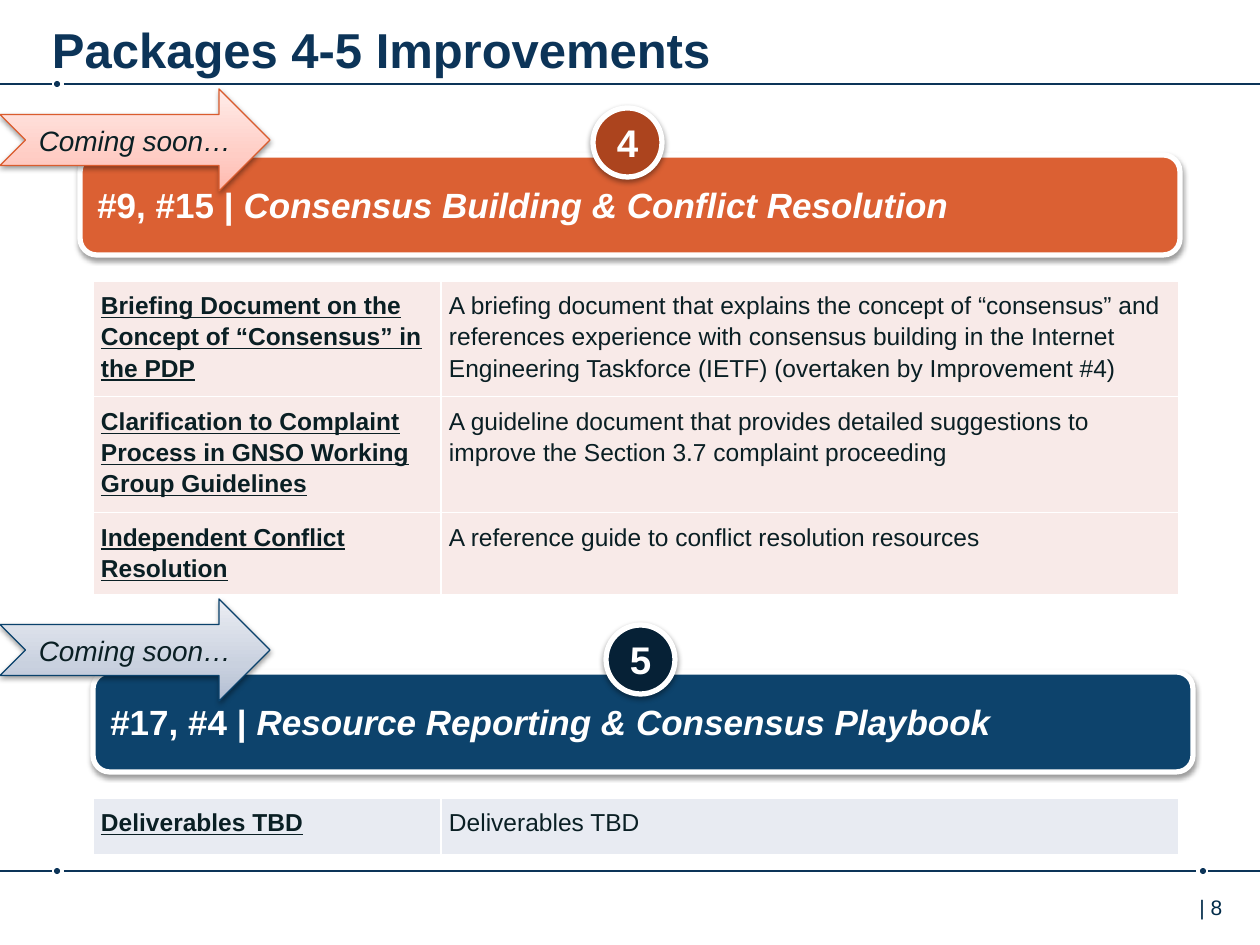
from typing import NamedTuple

from pptx import Presentation
from pptx import util as u
from pptx.dml.color import RGBColor
from pptx.enum import shapes, text
from pptx.oxml import parse_xml
from pptx.oxml.ns import nsdecls, qn

SCALE = 914400 / 126  # EMU per px
NAVY, INK, WHITE = "0C3458", "0A1F24", "FFFFFF"
KIND = shapes.MSO_SHAPE
LEFT, MID = text.PP_ALIGN.LEFT, text.PP_ALIGN.CENTER


class Box(NamedTuple):
    x: int
    y: int
    w: int
    h: int


class Run(NamedTuple):
    text: str
    size: int
    color: str
    bold: bool = False
    slant: bool = False
    under: bool = False


class Pack(NamedTuple):
    num: str
    tags: str
    name: str
    bar: Box
    disc: Box
    arrow: Box
    fills: tuple[str, str]  # bar, disc
    stops: tuple[str, str, str]
    edge: str
    tint: str
    top: int
    rows: list[tuple[int, str, str]]  # height, deliverable, summary


def px(n: float) -> u.Emu:
    return u.Emu(round(n * SCALE))


def rgb(code: str) -> RGBColor:
    return RGBColor.from_string(code)


def write(frame, runs: list[Run], align=LEFT, space: float = 1.0) -> None:
    para = frame.paragraphs[0]
    para.alignment, para.line_spacing = align, space
    for item in runs:
        run = para.add_run()
        run.text = item.text
        font = run.font
        font.name, font.size = "Arial", u.Pt(item.size)
        font.color.rgb = rgb(item.color)
        font.bold, font.italic, font.underline = item.bold, item.slant, item.under


def pad(item, side: int, ends: int) -> None:
    item.margin_left = item.margin_right = px(side)
    item.margin_top = item.margin_bottom = px(ends)


def shape(kind, box: Box, fill: str = "", edge: str = "", width: float = 0):
    item = slide.shapes.add_shape(kind, *map(px, box))
    item.shadow.inherit = False
    if fill:
        item.fill.solid()
        item.fill.fore_color.rgb = rgb(fill)
    if edge:
        item.line.color.rgb = rgb(edge)
        item.line.width = u.Pt(width)
    else:
        item.line.fill.background()
    item.text_frame.vertical_anchor = text.MSO_ANCHOR.MIDDLE
    return item


def shade(item) -> None:
    item._element.spPr.find(qn("a:effectLst")).append(parse_xml(
        f'<a:outerShdw {nsdecls("a")} blurRad="40000" dist="20000" dir="5400000" '
        'rotWithShape="0"><a:srgbClr val="000000"><a:alpha val="38000"/>'
        '</a:srgbClr></a:outerShdw>'))


def blend(item, colors: tuple[str, str, str]) -> None:
    item.fill.gradient()
    item.fill.gradient_angle = 90
    stops = item._element.spPr.find(".//" + qn("a:gsLst"))
    for old in list(stops):
        stops.remove(old)
    for pos, code in zip((0, 35, 100), colors):
        stops.append(parse_xml(
            f'<a:gs {nsdecls("a")} pos="{pos * 1000}"><a:srgbClr val="{code}"/></a:gs>'))


def rule(start: int, end: int, y: int) -> None:
    line = slide.shapes.add_connector(
        shapes.MSO_CONNECTOR.STRAIGHT, px(start), px(y), px(end), px(y))
    line.line.color.rgb = rgb(NAVY)
    line.line.width = u.Pt(1)
    line._element.spPr.append(parse_xml(f'<a:effectLst {nsdecls("a")}/>'))


def dot(x: int, y: int) -> None:
    shape(KIND.OVAL, Box(x - 3, y - 3, 6, 6), NAVY)


def border(cell) -> None:
    props = cell._tc.get_or_add_tcPr()
    for i, side in enumerate(("lnL", "lnR", "lnT", "lnB")):
        props.insert(i, parse_xml(
            f'<a:{side} {nsdecls("a")} w="12700"><a:solidFill>'
            f'<a:srgbClr val="{WHITE}"/></a:solidFill></a:{side}>'))


def table(pack: Pack) -> None:
    high = sum(row[0] for row in pack.rows)
    grid = slide.shapes.add_table(
        len(pack.rows), 2, *map(px, (93, pack.top, 1086, high))).table
    grid.first_row = grid.horz_banding = False
    for col, wide in zip(grid.columns, (348, 738)):
        col.width = px(wide)
    for r, (tall, *words) in enumerate(pack.rows):
        grid.rows[r].height = px(tall)
        for c, word in enumerate(words):
            cell = grid.cell(r, c)
            pad(cell, 8, 8)
            cell.fill.solid()
            cell.fill.fore_color.rgb = rgb(pack.tint)
            border(cell)
            head = c == 0
            write(cell.text_frame, [Run(word, 14, INK, head, False, head)], LEFT, 1.13)


def draw(pack: Pack) -> None:
    bar = shape(KIND.ROUNDED_RECTANGLE, pack.bar, pack.fills[0], WHITE, 3)
    write(bar.text_frame, [Run(pack.tags + " | ", 20, WHITE, True),
                           Run(pack.name, 20, WHITE, True, True)])
    disc = shape(KIND.OVAL, pack.disc, pack.fills[1], WHITE, 3)
    pad(disc.text_frame, 0, 0)
    write(disc.text_frame, [Run(pack.num, 22, WHITE, True)], MID)
    table(pack)
    arrow = shape(KIND.NOTCHED_RIGHT_ARROW, pack.arrow, "", pack.edge, 0.75)
    blend(arrow, pack.stops)
    arrow.text_frame.word_wrap = False
    write(arrow.text_frame, [Run("Coming soon…", 16, INK, False, True)], MID)
    for item in (bar, disc, arrow):
        shade(item)


PACKS = [
    Pack("4", "#9, #15", "Consensus Building & Conflict Resolution",
         Box(80, 155, 1100, 100), Box(593, 108, 69, 69), Box(0, 89, 270, 102),
         ("DB6033", "AC441E"), ("FFB9AE", "FFCDC5", "FFECE9"), "DA5C2E", "F8EAE8", 281, [
             (110, "Briefing Document on the Concept of “Consensus” in the PDP",
              "A briefing document that explains the concept of “consensus” and "
              "references experience with consensus building in the Internet "
              "Engineering Taskforce (IETF) (overtaken by Improvement #4)"),
             (110, "Clarification to Complaint Process in GNSO Working Group Guidelines",
              "A guideline document that provides detailed suggestions to "
              "improve the Section 3.7 complaint proceeding"),
             (79, "Independent Conflict Resolution",
              "A reference guide to conflict resolution resources")]),
    Pack("5", "#17, #4", "Resource Reporting & Consensus Playbook",
         Box(93, 672, 1100, 100), Box(606, 625, 69, 69), Box(0, 599, 270, 102),
         ("0D436C", "062136"), ("B2BDD2", "C9D1DF", "EBEDF3"), "0A426C", "E8EBF2", 798,
         [(57, "Deliverables TBD", "Deliverables TBD")]),
]

deck = Presentation()
deck.slide_width, deck.slide_height = px(1260), px(945)
slide = deck.slides.add_slide(deck.slide_layouts[5])

# Header and footer rules
for spans, dots, y in (
    (((0, 52), (64, 1260)), (57,), 84),
    (((0, 52), (64, 1196), (1208, 1260)), (57, 1203), 871),
):
    for start, end in spans:
        rule(start, end, y)
    for x in dots:
        dot(x, y)

# Title
title = slide.shapes.title
title.left, title.top, title.width, title.height = map(px, (52, 6, 1104, 62))
frame = title.text_frame
pad(frame, 0, 6)
frame.auto_size = text.MSO_AUTO_SIZE.NONE
frame.word_wrap = True
frame.vertical_anchor = text.MSO_ANCHOR.TOP
write(frame, [Run("Packages 4-5 Improvements", 28, NAVY, True)], LEFT, 1.13)

# Page number
page = slide.shapes.add_textbox(*map(px, (1187, 888, 73, 50))).text_frame
page.word_wrap = True
write(page, [Run("| 8", 12, "002B49")])

# Packages
for pack in PACKS:
    draw(pack)

deck.save("out.pptx")
